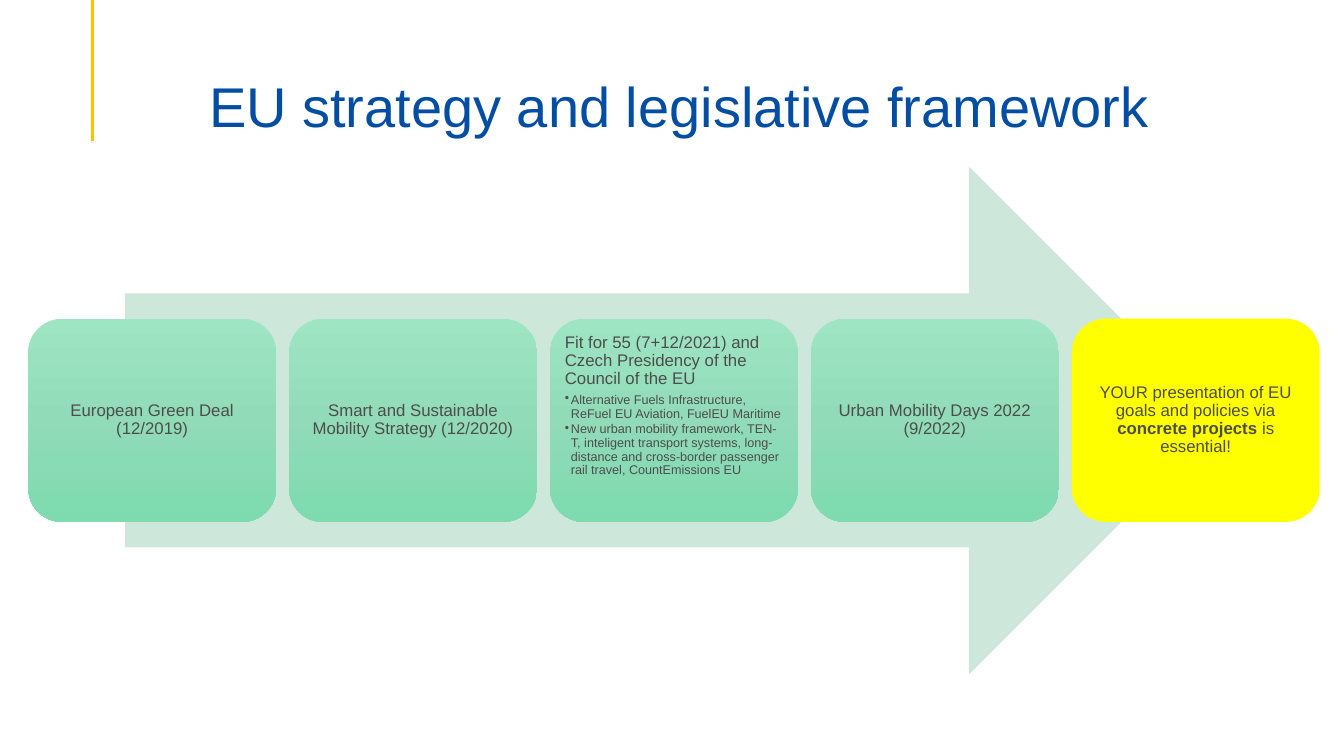
from copy import deepcopy

from pptx import Presentation
from pptx.dml.color import RGBColor
from pptx.enum.shapes import MSO_CONNECTOR, MSO_SHAPE
from pptx.enum.text import MSO_ANCHOR, MSO_AUTO_SIZE, PP_ALIGN
from pptx.oxml.ns import qn
from pptx.util import Inches, Pt

FONT = "Arial"
COLORS = {
    "title": "034EA2",
    "accent": "FFC000",
    "arrow": "CDE8DA",
    "text": "4D4D4D",
    "highlight": "FFFF00",
}
CARD_GRADIENT = [(0, "9EE6C3"), (0.5, "91DBB8"), (1, "7DDBAF")]

# Each card: heading as (text, bold) spans, then bullet points
CARDS = [
    ([("European Green Deal (12/2019)", False)], []),
    ([("Smart and Sustainable Mobility Strategy (12/2020)", False)], []),
    ([("Fit for 55 (7+12/2021) and Czech Presidency of the Council of the EU", False)], [
        "Alternative Fuels Infrastructure, ReFuel EU Aviation, FuelEU Maritime",
        "New urban mobility framework, TEN-T, inteligent transport systems, "
        "long-distance and cross-border passenger rail travel, CountEmissions EU",
    ]),
    ([("Urban Mobility Days 2022 (9/2022)", False)], []),
    ([("YOUR presentation of EU goals and policies via ", False),
      ("concrete projects ", True), ("is essential!", False)], []),
]


def rgb(name):
    return RGBColor.from_string(COLORS[name])


def style_paragraph(para, size, color, align, space_after=0):
    para.alignment = align
    para.line_spacing = 0.9
    para.space_before = Pt(0)
    para.space_after = Pt(space_after)
    para.font.name = FONT
    para.font.size = Pt(size)
    para.font.color.rgb = rgb(color)


def set_margins(frame, left, top, right, bottom):
    frame.margin_left, frame.margin_top = Inches(left), Inches(top)
    frame.margin_right, frame.margin_bottom = Inches(right), Inches(bottom)


def add_bullet(para):
    properties = para._p.get_or_add_pPr()
    properties.set("marL", str(Inches(0.06)))
    properties.set("indent", str(Inches(-0.06)))
    bullet = properties.makeelement(qn("a:buChar"), {"char": "•"})
    properties.append(bullet)


def fill_gradient(shape):
    shape.fill.gradient()
    shape.fill.gradient_angle = 270
    stop_list = shape._element.spPr.find(qn("a:gradFill")).find(qn("a:gsLst"))
    stop_list.append(deepcopy(stop_list[0]))
    for stop, (position, color) in zip(shape.fill.gradient_stops, CARD_GRADIENT):
        stop.position = position
        stop.color.rgb = RGBColor.from_string(color)


def add_header(page, left, top, width, height):
    # Accent line hanging from the top edge
    line_x = Inches(left - 0.14)
    line = page.shapes.add_connector(
        MSO_CONNECTOR.STRAIGHT, line_x, 0, line_x, Inches(1.4))
    line.line.color.rgb = rgb("accent")
    line.line.width = Pt(2.25)
    properties = line._element.spPr
    properties.append(properties.makeelement(qn("a:effectLst"), {}))

    # Title
    title = page.shapes.title
    title.left, title.top = Inches(left), Inches(top)
    title.width, title.height = Inches(width), Inches(height)
    frame = title.text_frame
    frame.text = "EU strategy and legislative framework "
    frame.word_wrap = True
    frame.auto_size = MSO_AUTO_SIZE.NONE
    frame.vertical_anchor = MSO_ANCHOR.BOTTOM
    set_margins(frame, 0.1, 0.05, 0.1, 0)
    style_paragraph(frame.paragraphs[0], 40, "title", PP_ALIGN.CENTER)


def add_preset(page, preset, left, top, width, height):
    shape = page.shapes.add_shape(
        preset, Inches(left), Inches(top), Inches(width), Inches(height))
    shape.shadow.inherit = False
    shape.line.fill.background()
    return shape


def add_card(page, left, top, width, height, heading, points, highlighted):
    card = add_preset(page, MSO_SHAPE.ROUNDED_RECTANGLE, left, top, width, height)
    if highlighted:
        card.fill.solid()
        card.fill.fore_color.rgb = rgb("highlight")
    else:
        fill_gradient(card)

    frame = card.text_frame
    frame.word_wrap = True
    frame.vertical_anchor = MSO_ANCHOR.TOP if points else MSO_ANCHOR.MIDDLE
    set_margins(frame, 0.05, 0.05, 0.05, 0.05)
    para = frame.paragraphs[0]
    for text, bold in heading:
        span = para.add_run()
        span.text = text
        span.font.bold = bold
    align = PP_ALIGN.LEFT if points else PP_ALIGN.CENTER
    style_paragraph(para, 12, "text", align, 4.2)
    for point in points:
        para = frame.add_paragraph()
        para.text = point
        para.level = 1
        add_bullet(para)
        style_paragraph(para, 9, "text", PP_ALIGN.LEFT, 1.35)


def add_process(page, left, top, width, height):
    # Background arrow
    arrow = add_preset(page, MSO_SHAPE.RIGHT_ARROW,
                       left + 0.96, top, width - 1.92, height)
    arrow.fill.solid()
    arrow.fill.fore_color.rgb = rgb("arrow")

    # Equal cards across the full width, centred on the arrow
    card_width, card_height = 2.46, height * 0.4
    step = (width - card_width) / (len(CARDS) - 1)
    card_top = top + (height - card_height) / 2
    for index, (heading, points) in enumerate(CARDS):
        add_card(page, left + index * step, card_top, card_width, card_height,
                 heading, points, highlighted=index == len(CARDS) - 1)


def main():
    deck = Presentation()
    deck.slide_width, deck.slide_height = Inches(13.33), Inches(7.5)
    page = deck.slides.add_slide(deck.slide_layouts[5])
    add_header(page, 1.06, 0.53, 11.5, 0.86)
    add_process(page, 0.28, 1.65, 12.81, 5.04)
    deck.save("out.pptx")


if __name__ == "__main__":
    main()
